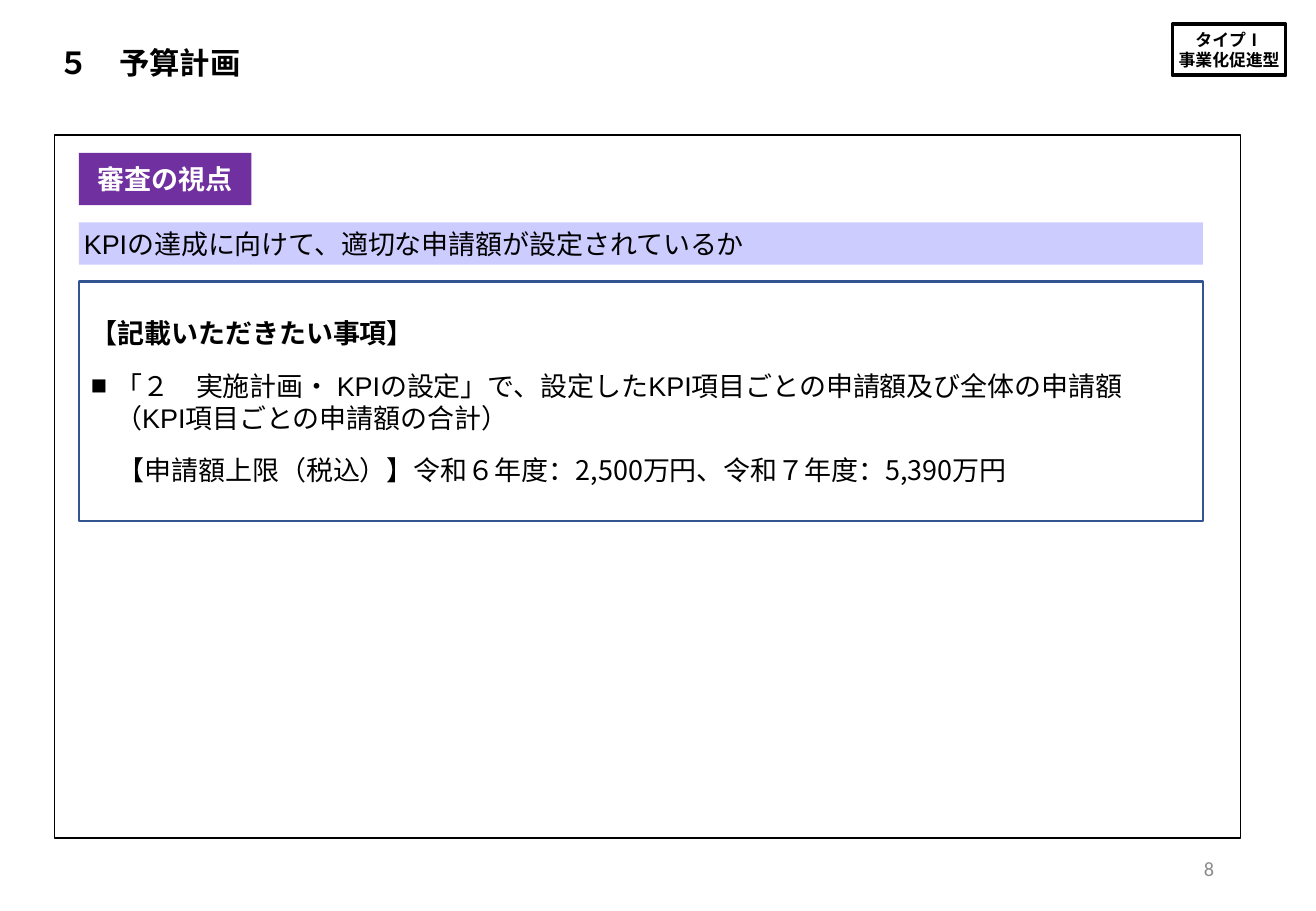
from dataclasses import dataclass

from lxml.etree import SubElement
from pptx import Presentation
from pptx.dml.color import RGBColor
from pptx.enum.shapes import MSO_SHAPE
from pptx.enum.text import MSO_ANCHOR, PP_ALIGN
from pptx.oxml.ns import qn
from pptx.util import Inches, Pt


@dataclass(frozen=True)
class Theme:
    black: str = "000000"
    white: str = "FFFFFF"
    purple: str = "7030A0"
    lavender: str = "CCCCFF"
    blue: str = "325491"
    gray: str = "8C8C8C"
    latin: str = "Arial"
    heading: str = "Calibri"
    japanese: str = "Noto Sans CJK JP"
    title_size: int = 18
    body_size: int = 16
    number_size: int = 12
    tag_size: int = 10


THEME = Theme()

# A paragraph is a list of (text, font) runs.
TAG = [[("タイプⅠ", THEME.latin)], [("事業化促進型", THEME.latin)]]
TITLE = [[("５　予算計画", THEME.heading)]]
VIEWPOINT_LABEL = [[("審査の視点", THEME.latin)]]
VIEWPOINT = [[("KPIの達成に向けて、適切な申請額が設定されているか", THEME.latin)]]
PAGE_NUMBER = [[("8", THEME.heading)]]
REQUEST_HEADING = [("【記載いただきたい事項】", THEME.latin)]
REQUEST_ITEM = [
    ("「２　", THEME.latin),
    ("実施計画・", THEME.heading),
    (" KPI", THEME.latin),
    ("の設定」", THEME.heading),
    ("で、設定したKPI項目ごとの申請額及び全体の申請額（KPI項目ごとの申請額の合計）", THEME.latin),
]
REQUEST_LIMIT = [
    ("　【申請額上限（税込）】令和６年度：2,500万円、令和７年度：5,390万円", THEME.japanese),
]
REQUESTS = [REQUEST_HEADING, REQUEST_ITEM, REQUEST_LIMIT]

SLIDE_WIDTH, SLIDE_HEIGHT = 10.83, 7.5
CONTENT_LEFT, CONTENT_WIDTH = 0.65, 9.25
CONTENT_TOP, GAP = 1.26, 0.14
LABEL_HEIGHT, VIEWPOINT_HEIGHT, REQUEST_HEIGHT = 0.43, 0.35, 1.97


def add_box(slide, left, top, width, height, fill=None, line=None, line_width=1):
    box = slide.shapes.add_shape(
        MSO_SHAPE.RECTANGLE, Inches(left), Inches(top), Inches(width), Inches(height))
    box.shadow.inherit = False
    if fill:
        box.fill.solid()
        box.fill.fore_color.rgb = RGBColor.from_string(fill)
    else:
        box.fill.background()
    if line:
        box.line.color.rgb = RGBColor.from_string(line)
        box.line.width = Pt(line_width)
    else:
        box.line.fill.background()
    return box


def add_text_box(slide, left, top, width, height):
    return slide.shapes.add_textbox(
        Inches(left), Inches(top), Inches(width), Inches(height))


def write(shape, paragraphs, size=THEME.body_size, color=THEME.black, bold=False,
          align=PP_ALIGN.LEFT, inset=0.04, space_before=0):
    frame = shape.text_frame
    frame.word_wrap = True
    frame.vertical_anchor = MSO_ANCHOR.MIDDLE
    frame.margin_left = frame.margin_right = Inches(inset)
    frame.margin_top = frame.margin_bottom = Inches(min(inset, 0.05))
    for index, runs in enumerate(paragraphs):
        paragraph = frame.add_paragraph() if index else frame.paragraphs[0]
        paragraph.alignment = align
        paragraph.space_before = Pt(space_before)
        for text, font_name in runs:
            run = paragraph.add_run()
            run.text = text
            run.font.name = font_name
            run.font.size = Pt(size)
            run.font.bold = bold
            run.font.color.rgb = RGBColor.from_string(color)
            SubElement(run.font._element, qn("a:ea"), typeface=THEME.japanese)
    return frame


def add_square_bullet(paragraph, indent=0.2):
    properties = paragraph._p.get_or_add_pPr()
    properties.set("marL", str(Inches(indent)))
    properties.set("indent", str(-Inches(indent)))
    SubElement(properties, qn("a:buFont"), typeface=THEME.latin)
    SubElement(properties, qn("a:buChar"), char="■")


def main():
    presentation = Presentation()
    presentation.slide_width = Inches(SLIDE_WIDTH)
    presentation.slide_height = Inches(SLIDE_HEIGHT)
    slide = presentation.slides.add_slide(presentation.slide_layouts[6])

    tag = add_box(slide, 9.65, 0.2, 0.93, 0.42, line=THEME.black, line_width=2.25)
    write(tag, TAG, size=THEME.tag_size, bold=True, align=PP_ALIGN.CENTER)
    title = add_text_box(slide, 0.44, 0.32, 4.05, 0.38)
    write(title, TITLE, size=THEME.title_size, bold=True)
    add_box(slide, 0.45, 1.11, 9.76, 5.79, fill=THEME.white, line=THEME.black)

    viewpoint_top = CONTENT_TOP + LABEL_HEIGHT + GAP
    request_top = viewpoint_top + VIEWPOINT_HEIGHT + GAP
    label = add_box(slide, CONTENT_LEFT, CONTENT_TOP, 1.42, LABEL_HEIGHT, fill=THEME.purple)
    write(label, VIEWPOINT_LABEL, color=THEME.white, bold=True, align=PP_ALIGN.CENTER)
    viewpoint = add_box(slide, CONTENT_LEFT, viewpoint_top, CONTENT_WIDTH,
                        VIEWPOINT_HEIGHT, fill=THEME.lavender)
    write(viewpoint, VIEWPOINT)

    request = add_box(slide, CONTENT_LEFT, request_top, CONTENT_WIDTH, REQUEST_HEIGHT,
                      fill=THEME.white, line=THEME.blue, line_width=1.5)
    heading, item, _ = write(request, REQUESTS, inset=0.1, space_before=12).paragraphs
    for run in heading.runs:
        run.font.bold = True
    add_square_bullet(item)

    number = add_text_box(slide, 7.65, 6.95, 2.44, 0.4)
    write(number, PAGE_NUMBER, size=THEME.number_size, color=THEME.gray,
          align=PP_ALIGN.RIGHT, inset=0.1)

    presentation.save("out.pptx")


if __name__ == "__main__":
    main()
